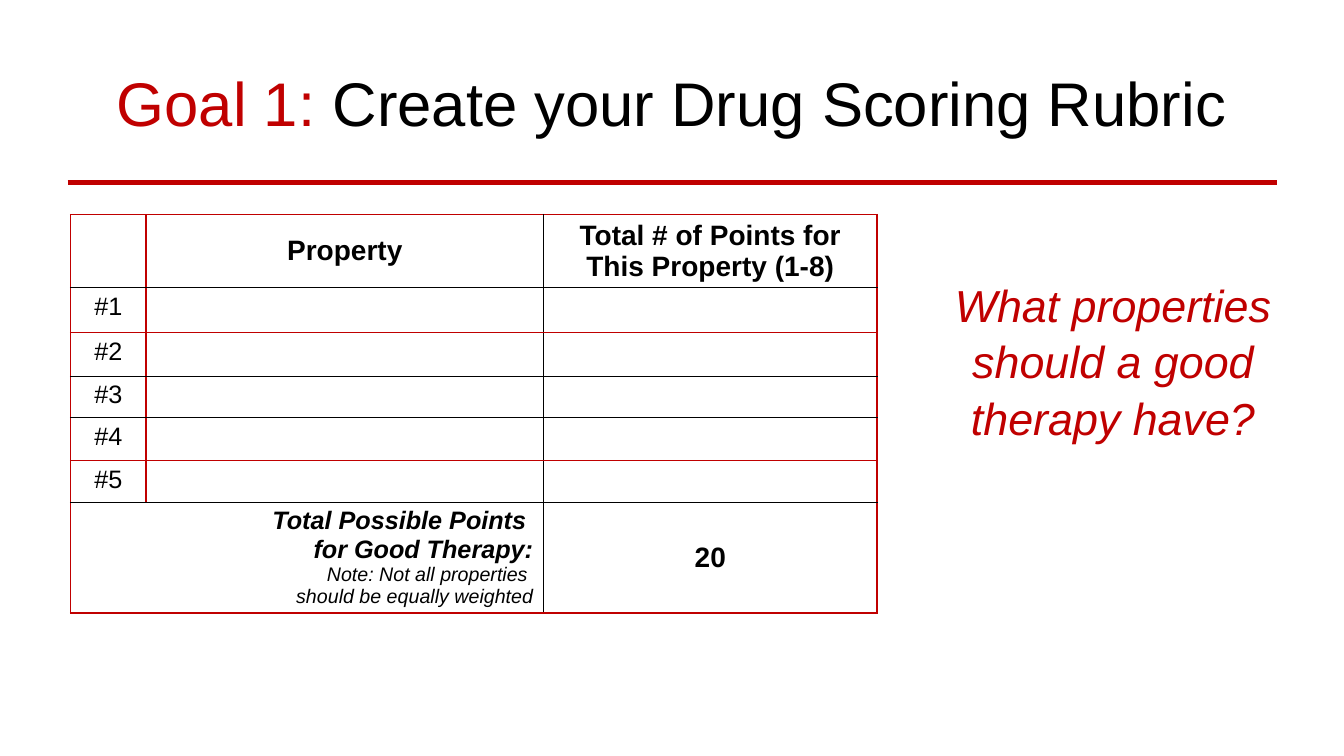
from dataclasses import dataclass

from lxml.etree import SubElement
from pptx import Presentation
from pptx.dml.color import RGBColor
from pptx.enum.shapes import MSO_CONNECTOR as Connector
from pptx.enum.text import MSO_ANCHOR as Anchor, MSO_AUTO_SIZE as AutoSize, PP_ALIGN as Align
from pptx.oxml import parse_xml
from pptx.oxml.ns import nsdecls, qn
from pptx.util import Inches, Pt


@dataclass(frozen=True)
class Theme:
    font: str = "Arial"
    accent: str = "C00000"
    ink: str = "000000"
    title: int = 44
    question: int = 32
    heading: int = 20
    body: int = 18
    note: int = 14


THEME = Theme()
ACCENT_LINE = (THEME.accent, 1.25)
INK_LINE = (THEME.ink, 0.5)

COLUMN_WIDTHS = [0.75, 3.94, 3.31]
ROW_HEIGHTS = [0.72, 0.45, 0.43, 0.41, 0.43, 0.41, 1.1]
COLUMN_RULES = [ACCENT_LINE, ACCENT_LINE, INK_LINE, ACCENT_LINE]
ROW_RULES = [ACCENT_LINE, INK_LINE, ACCENT_LINE, INK_LINE,
             INK_LINE, ACCENT_LINE, INK_LINE, ACCENT_LINE]
HEADINGS = ["Property", "Total # of Points for This Property (1-8)"]
TOTAL_LABEL = ["Total Possible Points ", "for Good Therapy:"]
TOTAL_NOTE = ["Note: Not all properties ", "should be equally weighted"]


def add_text(paragraph, text, size=THEME.body, color=THEME.ink,
             bold=False, italic=False, align=Align.CENTER):
    paragraph.alignment = align
    run = paragraph.add_run()
    run.text = text
    font = run.font
    font.name, font.size = THEME.font, Pt(size)
    font.bold, font.italic = bold, italic
    font.color.rgb = RGBColor.from_string(color)


def add_title(slide, left, top, width, height):
    title = slide.shapes.title
    title.left, title.top = Inches(left), Inches(top)
    title.width, title.height = Inches(width), Inches(height)
    frame = title.text_frame
    frame.auto_size = AutoSize.NONE
    frame.vertical_anchor = Anchor.MIDDLE
    heading = frame.paragraphs[0]
    add_text(heading, "Goal 1: ", size=THEME.title, color=THEME.accent)
    add_text(heading, "Create your Drug Scoring Rubric", size=THEME.title)


def add_divider(slide, left, top, width):
    divider = slide.shapes.add_connector(
        Connector.STRAIGHT, Inches(left), Inches(top), Inches(left + width), Inches(top))
    divider.line.color.rgb = RGBColor.from_string(THEME.accent)
    divider.line.width = Pt(3)
    SubElement(divider._element.spPr, qn("a:effectLst"))


def set_borders(cell, **borders):
    """Draw the cell sides L, R, T and B, each given as (colour, points)."""
    properties = cell._tc.get_or_add_tcPr()
    for position, side in enumerate("LRTB"):
        color, points = borders[side]
        properties.insert(position, parse_xml(
            f'<a:ln{side} {nsdecls("a")} w="{Pt(points)}"><a:solidFill>'
            f'<a:srgbClr val="{color}"/></a:solidFill></a:ln{side}>'))


def add_rubric(slide, left, top):
    rubric = slide.shapes.add_table(
        len(ROW_HEIGHTS), len(COLUMN_WIDTHS), Inches(left), Inches(top),
        Inches(sum(COLUMN_WIDTHS)), Inches(sum(ROW_HEIGHTS))).table
    rubric.first_row = rubric.horz_banding = False
    for column, width in zip(rubric.columns, COLUMN_WIDTHS):
        column.width = Inches(width)
    for row, height in zip(rubric.rows, ROW_HEIGHTS):
        row.height = Inches(height)

    last = len(ROW_HEIGHTS) - 1
    total = rubric.cell(last, 0)
    total.merge(rubric.cell(last, 1))
    for r in range(len(ROW_HEIGHTS)):
        for c in range(len(COLUMN_WIDTHS)):
            cell = rubric.cell(r, c)
            cell.fill.background()
            right = c + 2 if cell.is_merge_origin else c + 1
            set_borders(cell, L=COLUMN_RULES[c], R=COLUMN_RULES[right],
                        T=ROW_RULES[r], B=ROW_RULES[r + 1])

    for c, heading in enumerate(HEADINGS, start=1):
        cell = rubric.cell(0, c)
        cell.vertical_anchor = Anchor.MIDDLE
        add_text(cell.text_frame.paragraphs[0], heading, size=THEME.heading, bold=True)
    for r in range(1, last):
        add_text(rubric.cell(r, 0).text_frame.paragraphs[0], f"#{r}")

    frame = total.text_frame
    for i, line in enumerate(TOTAL_LABEL + TOTAL_NOTE):
        is_label = i < len(TOTAL_LABEL)
        add_text(frame.add_paragraph() if i else frame.paragraphs[0], line,
                 size=THEME.body if is_label else THEME.note,
                 bold=is_label, italic=True, align=Align.RIGHT)
    points = rubric.cell(last, 2)
    points.vertical_anchor = Anchor.MIDDLE
    add_text(points.text_frame.paragraphs[0], "20", size=THEME.heading, bold=True)


def add_question(slide, left, top, width, height):
    question = slide.shapes.add_textbox(
        Inches(left), Inches(top), Inches(width), Inches(height))
    frame = question.text_frame
    frame.word_wrap = True
    frame.auto_size = AutoSize.SHAPE_TO_FIT_TEXT
    paragraph = frame.paragraphs[0]
    paragraph.line_spacing = 1.05
    add_text(paragraph, "What properties should a good therapy have?",
             size=THEME.question, color=THEME.accent, italic=True)


def main():
    deck = Presentation()
    deck.slide_width, deck.slide_height = Inches(13.33), Inches(7.5)
    slide = deck.slides.add_slide(deck.slide_layouts.get_by_name("Title Only"))
    add_divider(slide, 0.67, 1.81, 12)
    add_title(slide, 0.15, 0.57, 13.03, 0.88)
    add_rubric(slide, 0.7, 2.13)
    add_question(slide, 9.18, 2.68, 3.72, 1.72)
    deck.save("out.pptx")


if __name__ == "__main__":
    main()
